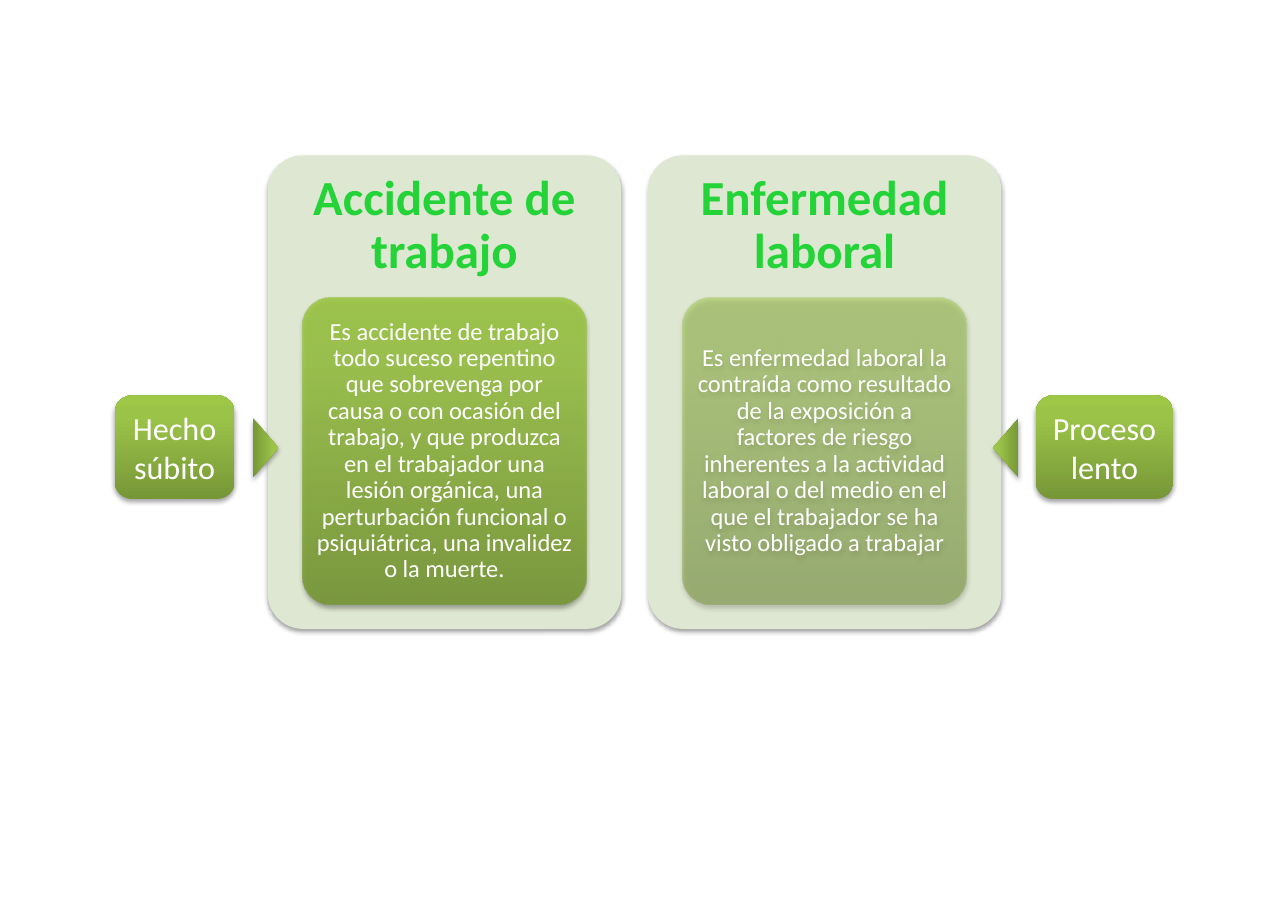
from pptx import Presentation
from pptx.dml.color import RGBColor
from pptx.enum.shapes import MSO_SHAPE
from pptx.enum.text import MSO_ANCHOR, PP_ALIGN
from pptx.oxml import parse_xml
from pptx.oxml.ns import nsdecls
from pptx.util import Emu, Pt

PX_PER_INCH = 100
GREEN_STOPS = [(0, "779737"), (80, "9BC348"), (100, "9DC746")]
PANEL_TOP, PANEL_WIDTH, PANEL_HEIGHT = 141, 321, 430
HEADING_HEIGHT = 129
DEFINITION_WIDTH, DEFINITION_HEIGHT = 257, 279
TRAIT_TOP, TRAIT_HEIGHT = 359, 94
ARROW_TOP, ARROW_WIDTH, ARROW_HEIGHT = 395, 54, 23

PANELS = [
    (243, "Accidente de trabajo", 90,
     "Es accidente de trabajo todo suceso repentino que sobrevenga por causa o con "
     "ocasión del trabajo, y que produzca en el trabajador una lesión orgánica, una "
     "perturbación funcional o psiquiátrica, una invalidez o la muerte."),
    (588, "Enfermedad laboral", 50,
     "Es enfermedad laboral la contraída como resultado de la exposición a factores "
     "de riesgo inherentes a la actividad laboral o del medio en el que el trabajador "
     "se ha visto obligado a trabajar"),
]
TRAITS = [
    (104, 109, "Hecho súbito", 214, 90),
    (940, 125, "Proceso lento", 886, 270),
]


def px(length):
    """Convert pixels to EMU."""
    return Emu(length * 914400 // PX_PER_INCH)


def rgb(value):
    """Turn a hex string into a colour."""
    return RGBColor.from_string(value)


def write(frame, text, size, color="FFFFFF", bold=False, spacing=1.0, margins=(10, 5)):
    """Put centred text into a text frame."""
    frame.word_wrap = True
    frame.vertical_anchor = MSO_ANCHOR.MIDDLE
    frame.margin_left = frame.margin_right = px(margins[0])
    frame.margin_top = frame.margin_bottom = px(margins[1])
    paragraph = frame.paragraphs[0]
    paragraph.alignment = PP_ALIGN.CENTER
    paragraph.line_spacing = spacing
    run = paragraph.add_run()
    run.text = text
    run.font.name = "Calibri"
    run.font.size = Pt(size)
    run.font.bold = bold
    run.font.color.rgb = rgb(color)


def add_shadow(shape):
    """Give a shape a soft shadow below it."""
    shape.shadow.inherit = False
    effects = shape._element.spPr.find(".//{*}effectLst")
    effects.append(parse_xml(
        f'<a:outerShdw {nsdecls("a")} blurRad="40000" dist="23000" dir="5400000" '
        'rotWithShape="0"><a:srgbClr val="000000"><a:alpha val="35000"/>'
        '</a:srgbClr></a:outerShdw>'))


def add_block(slide, preset, box, adjustment=None):
    """Add an outline-free shape with a shadow."""
    block = slide.shapes.add_shape(preset, *map(px, box))
    if adjustment is not None:
        block.adjustments[0] = adjustment
    block.line.fill.background()
    add_shadow(block)
    return block


def add_green_block(slide, preset, box, opacity=100, adjustment=None):
    """Add a block with the green gradient, dark at its base."""
    block = add_block(slide, preset, box, adjustment)
    stops = "".join(
        f'<a:gs pos="{position * 1000}"><a:srgbClr val="{color}">'
        f'<a:alpha val="{opacity * 1000}"/></a:srgbClr></a:gs>'
        for position, color in GREEN_STOPS)
    gradient = parse_xml(
        f'<a:gradFill {nsdecls("a")} rotWithShape="1"><a:gsLst>{stops}</a:gsLst>'
        '<a:lin ang="16200000" scaled="0"/></a:gradFill>')
    block._element.spPr.find("{*}prstGeom").addnext(gradient)
    return block


def add_panel(slide, left, heading, opacity, definition):
    """Add a pale panel with its heading and definition."""
    panel = add_block(slide, MSO_SHAPE.ROUNDED_RECTANGLE,
                      (left, PANEL_TOP, PANEL_WIDTH, PANEL_HEIGHT), 0.1)
    panel.fill.solid()
    panel.fill.fore_color.rgb = rgb("DEE7D1")
    title = slide.shapes.add_textbox(
        *map(px, (left, PANEL_TOP, PANEL_WIDTH, HEADING_HEIGHT)))
    write(title.text_frame, heading, 32, color="23D338", bold=True,
          spacing=0.9, margins=(13, 13))
    inset = (PANEL_WIDTH - DEFINITION_WIDTH) // 2
    body = add_green_block(
        slide, MSO_SHAPE.ROUNDED_RECTANGLE,
        (left + inset, PANEL_TOP + HEADING_HEIGHT, DEFINITION_WIDTH, DEFINITION_HEIGHT),
        opacity, 0.1)
    write(body.text_frame, definition, 16, spacing=0.9, margins=(4, 3))


def add_trait(slide, left, width, label, arrow_left, rotation):
    """Add a side label and the arrow from it to its panel."""
    trait = add_green_block(slide, MSO_SHAPE.ROUNDED_RECTANGLE,
                            (left, TRAIT_TOP, width, TRAIT_HEIGHT))
    write(trait.text_frame, label, 21)
    arrow = add_green_block(slide, MSO_SHAPE.ISOSCELES_TRIANGLE,
                            (arrow_left, ARROW_TOP, ARROW_WIDTH, ARROW_HEIGHT))
    arrow.rotation = rotation


def main():
    """Build the slide and save it."""
    deck = Presentation()
    deck.slide_width, deck.slide_height = px(1169), px(827)
    slide = deck.slides.add_slide(deck.slide_layouts[6])
    for panel in PANELS:
        add_panel(slide, *panel)
    for trait in TRAITS:
        add_trait(slide, *trait)
    deck.save("out.pptx")


if __name__ == "__main__":
    main()
